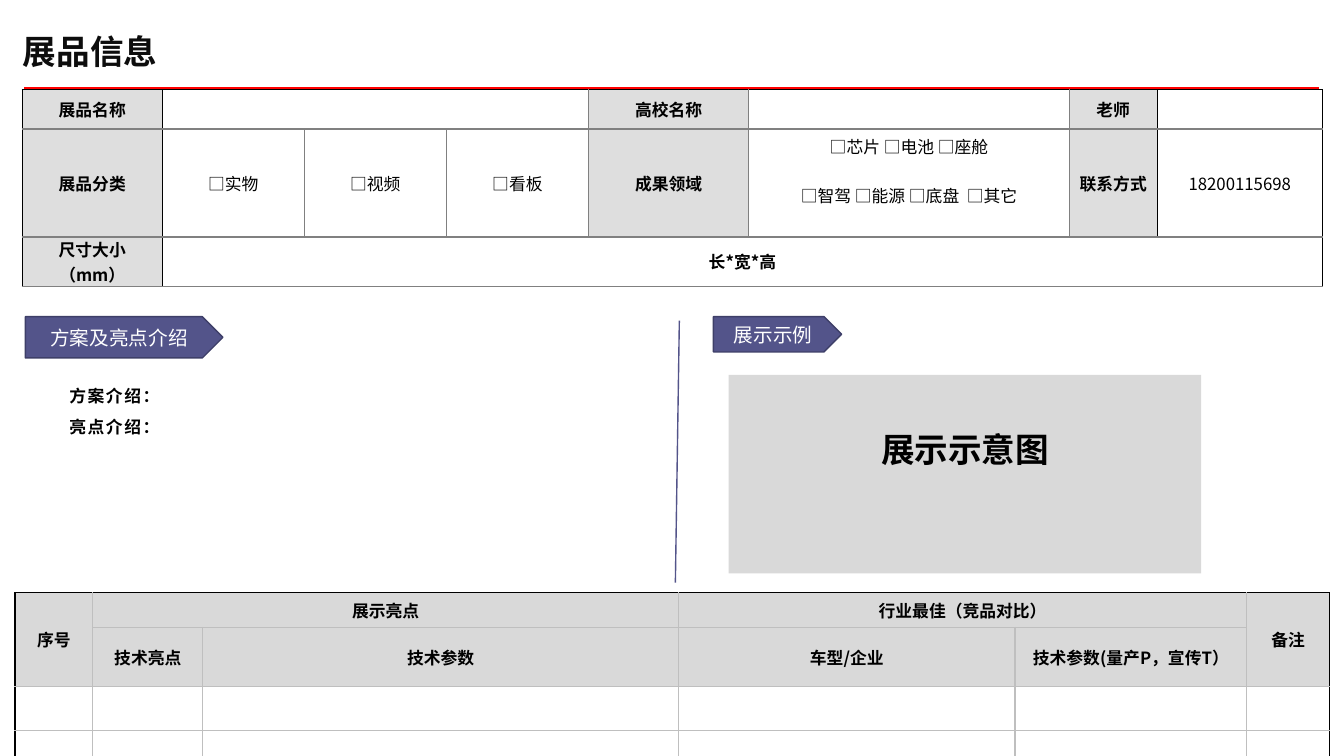
from lxml.etree import SubElement
from pptx import Presentation
from pptx.dml.color import RGBColor
from pptx.enum.shapes import MSO_CONNECTOR, MSO_SHAPE
from pptx.enum.text import MSO_ANCHOR, MSO_AUTO_SIZE, PP_ALIGN
from pptx.oxml.ns import qn
from pptx.util import Cm, Pt

HUES = {
    "ink": "000000", "title": "0D0D0D", "white": "FFFFFF", "red": "FF0000",
    "plum": "53548A", "edge": "3E3F68", "label": "DEDEDE", "head": "D9D9D9",
    "rule": "808080", "pale": "BFBFBF",
}
RGB = {name: RGBColor.from_string(code) for name, code in HUES.items()}
NOTO, LATIN = "Noto Sans CJK SC", "Calibri"
MID = {"vertical_anchor": MSO_ANCHOR.MIDDLE}


def write(frame, lines, size, hue="ink", bold=True, track=None, **form):
    for n, line in enumerate(lines):
        para = frame.paragraphs[0] if n == 0 else frame.add_paragraph()
        for key, value in form.items():
            if n or key != "space_before":
                setattr(para, key, value)
        for text, face in [(line, NOTO)] if isinstance(line, str) else line:
            run = para.add_run()
            run.text = text
            look = {"name": face, "size": Pt(size), "bold": bold}
            for key, value in look.items():
                setattr(run.font, key, value)
            run.font.color.rgb = RGB[hue]
            props = run.font._element
            SubElement(props, qn("a:ea"), typeface=NOTO)
            if track:
                props.set("spc", str(track))


def grid(left, top, cols, rows, spans, words, fills, dark, rule, inset):
    frame = slide.shapes.add_table(
        len(rows), len(cols), Cm(left), Cm(top), Cm(sum(cols)), Cm(sum(rows)))
    table = frame.table
    table.first_row = table.horz_banding = False
    for col, width in zip(table.columns, cols):
        col.width = Cm(width)
    for row, height in zip(table.rows, rows):
        row.height = Cm(height)
    for r, c, low, far in spans:
        table.cell(r, c).merge(table.cell(low, far))
    for r in range(len(rows)):
        for c in range(len(cols)):
            cell = table.cell(r, c)
            if cell.is_spanned:
                continue
            for key, value in (MID | inset).items():
                setattr(cell, key, value)
            high = cell.span_height if cell.is_merge_origin else 1
            wide = cell.span_width if cell.is_merge_origin else 1
            props = cell._tc.get_or_add_tcPr()
            sides = {"L": ("col", c), "R": ("col", c + wide),
                     "T": ("row", r), "B": ("row", r + high)}
            for side, (axis, at) in sides.items():
                edge = SubElement(props, qn("a:ln" + side), w=str(Pt(1)))
                paint = SubElement(edge, qn("a:solidFill"))
                hue = "ink" if at in dark[axis] else rule
                SubElement(paint, qn("a:srgbClr"), val=HUES[hue])
            if (r, c) in fills:
                cell.fill.solid()
                cell.fill.fore_color.rgb = RGB[fills[r, c]]
            else:
                cell.fill.background()
            lines = words.get((r, c), [])
            plain = lines and (lines[0][0] == "□" or lines[0].isdigit())
            write(cell.text_frame, lines, 12, bold=not plain,
                  alignment=PP_ALIGN.CENTER, space_before=Pt(17.5))
    return table


deck = Presentation()
deck.slide_width, deck.slide_height = Cm(33.87), Cm(19.05)
slide = deck.slides.add_slide(deck.slide_layouts[6])

lines = [
    (0.61, 2.21, 33.25, 2.21, "red", 1.5),
    (17.12, 8.08, 17.02, 14.68, "plum", 1),
]
for x, y, far, low, hue, width in lines:
    line = slide.shapes.add_connector(
        MSO_CONNECTOR.STRAIGHT, Cm(x), Cm(y), Cm(far), Cm(low))
    line.line.color.rgb = RGB[hue]
    line.line.width = Pt(width)
    SubElement(line._element.spPr, qn("a:effectLst"))

words = {
    (0, 0): ["展品名称"], (0, 4): ["高校名称"], (0, 6): ["老师"],
    (1, 0): ["展品分类"], (1, 1): ["□实物"], (1, 2): ["□视频"],
    (1, 3): ["□看板"], (1, 4): ["成果领域"],
    (1, 5): ["□芯片 □电池 □座舱", "□智驾 □能源 □底盘  □其它"],
    (1, 6): ["联系方式"], (1, 7): ["18200115698"],
    (2, 0): ["尺寸大小（mm）"], (2, 1): ["长*宽*高"],
}
fills = {(0, c): "white" for c in (1, 5, 7)}
fills |= {(r, c): "label" for r in (0, 1) for c in (0, 4, 6)}
fills[2, 0] = "label"
inset = {"margin_left": Cm(0.1), "margin_right": Cm(0.1),
         "margin_top": 0, "margin_bottom": 0}
info = grid(0.56, 2.26, [3.53] + [3.58] * 3 + [4.04, 8.08, 2.21, 4.17],
            [0.99, 2.72, 1.24], [(0, 1, 0, 3), (2, 1, 2, 7)], words, fills,
            {"col": (0, 1, 7, 8), "row": (0,)}, "rule", inset)
info.cell(1, 5).margin_bottom = Cm(0.62)

plates = [
    (0.64, 4.98, 1.04, [("方案及", NOTO), ("亮点介绍", LATIN)]),
    (17.98, 3.23, 0.89, [("展示示例", LATIN)]),
]
for x, width, height, label in plates:
    plate = slide.shapes.add_shape(
        MSO_SHAPE.PENTAGON, Cm(x), Cm(7.98), Cm(width), Cm(height))
    plate.shadow.inherit = False
    plate.fill.solid()
    plate.fill.fore_color.rgb = RGB["plum"]
    plate.line.color.rgb = RGB["edge"]
    plate.line.width = Pt(1)
    plate.text_frame.vertical_anchor = MSO_ANCHOR.MIDDLE
    write(plate.text_frame, [label], 14, "white", False,
          alignment=PP_ALIGN.CENTER)

words = {
    (0, 0): ["序号"], (0, 1): ["展示亮点"], (0, 3): ["行业最佳（竞品对比）"],
    (0, 5): ["备注"], (1, 1): ["技术亮点"], (1, 2): ["技术参数"],
    (1, 3): ["车型/企业"], (1, 4): ["技术参数(量产P，宣传T）"],
}
grid(0.38, 14.94, [1.96, 2.77, 11.99, 8.48, 5.84, 2.08],
     [0.76, 0.76, 1.12, 1.22],
     [(0, 0, 1, 0), (0, 1, 0, 2), (0, 3, 0, 4), (0, 5, 1, 5)], words,
     {spot: "head" for spot in words}, {"col": (0, 6), "row": (0, 4)},
     "pale", {})

panel = slide.shapes.add_shape(
    MSO_SHAPE.RECTANGLE, Cm(18.36), Cm(9.45), Cm(11.91), Cm(5))
panel.shadow.inherit = False
panel.fill.solid()
panel.fill.fore_color.rgb = RGB["head"]
panel.line.fill.background()

texts = [
    ((1.5, 9.45, 11.91, 4.5), ["方案介绍：", "亮点介绍："], 12, "ink", {},
     {"track": 110, "line_spacing": 1.3, "space_before": Pt(3)}),
    ((20.37, 10.21, 7.9, 1.75), ["展示示意图"], 24, "ink",
     {"margin_left": Cm(0.1), "margin_right": Cm(0.1),
      "margin_top": Cm(0.1), "margin_bottom": Cm(0.1)},
     {"alignment": PP_ALIGN.CENTER, "line_spacing": 1.5}),
    ((0.33, 0.66, 23.57, 1.27), ["展品信息"], 24, "title",
     {"auto_size": MSO_AUTO_SIZE.SHAPE_TO_FIT_TEXT}, {}),
]
for place, copy, size, hue, box, form in texts:
    frame = slide.shapes.add_textbox(*map(Cm, place)).text_frame
    for key, value in ({"word_wrap": True} | box).items():
        setattr(frame, key, value)
    write(frame, copy, size, hue, **form)

deck.save("out.pptx")
